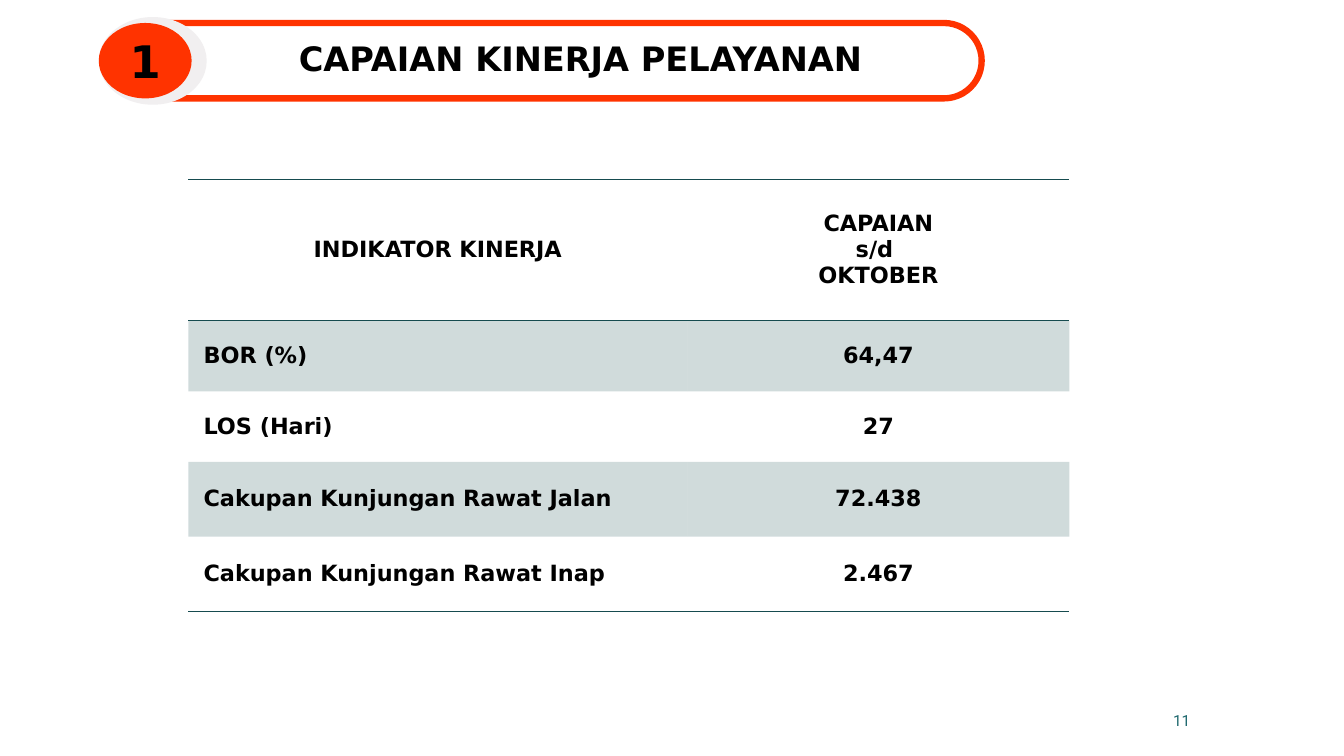
from dataclasses import dataclass, field
from typing import Any, Optional

from lxml import etree
from pptx import Presentation
from pptx import util as u
from pptx.dml import color as col
from pptx.enum import shapes, text
from pptx.oxml import ns

BLACK = col.RGBColor(0x00, 0x00, 0x00)
WHITE = col.RGBColor(0xFF, 0xFF, 0xFF)
RED = col.RGBColor(0xFF, 0x33, 0x00)
GREY = col.RGBColor(0xF1, 0xEF, 0xF0)
TEAL = col.RGBColor(0x16, 0x4B, 0x4F)
AQUA = col.RGBColor(0x1F, 0x69, 0x6F)

KIND = shapes.MSO_SHAPE
MID = text.MSO_ANCHOR.MIDDLE
LEFT, MAIN, RIGHT = text.PP_ALIGN.LEFT, text.PP_ALIGN.CENTER, text.PP_ALIGN.RIGHT
BOLD = {"name": "DejaVu Sans", "bold": True}
PLAIN_GRID = "{2D5ABB26-0587-4C30-8999-92F81FD0307C}"

COLS = (12.57, 9.63)
ROWS = (
    (3.56, "INDIKATOR KINERJA", "CAPAIAN\ns/d \nOKTOBER"),
    (1.78, "BOR (%)", "64,47"),
    (1.78, "LOS (Hari)", "27"),
    (1.88, "Cakupan Kunjungan Rawat Jalan", "72.438"),
    (1.88, "Cakupan Kunjungan Rawat Inap", "2.467"),
)


@dataclass
class Part:
    """A shape, or a text box when kind is None; lengths in cm."""
    box: tuple[float, float, float, float]
    kind: Optional[Any] = None
    fill: Optional[col.RGBColor] = None
    line: Optional[col.RGBColor] = None
    words: str = ""
    size: float = 12
    ink: col.RGBColor = BLACK
    font: dict[str, Any] = field(default_factory=lambda: BOLD)
    para: dict[str, Any] = field(default_factory=lambda: {"alignment": MAIN})
    anchor: Any = MID


PANEL = Part((2.31, 0, 31.52, 19.05), KIND.RECTANGLE, WHITE)
PARTS = (
    Part((22.35, 17.65, 7.9, 1.02), words="11", size=11, ink=AQUA,
         font={"name": "Roboto"}, para={"alignment": RIGHT}),
    Part((2.79, 0.58, 21.95, 1.9), KIND.ROUNDED_RECTANGLE, line=RED),
    Part((2.49, 0.43, 2.72, 2.21), KIND.OVAL, GREY),
    Part((2.49, 0.58, 2.34, 1.9), KIND.OVAL, RED, words="1", size=32),
    Part((3.71, 0.2, 21.84, 1.9), words="CAPAIAN KINERJA PELAYANAN", size=24,
         para={"alignment": MAIN, "line_spacing": 0.9},
         anchor=text.MSO_ANCHOR.BOTTOM),
)


def apply(item: Any, vals: dict[str, Any]) -> None:
    for key, val in vals.items():
        setattr(item, key, val)


def write(frame: Any, words: str, size: float, ink: col.RGBColor,
          font: dict[str, Any], para: dict[str, Any]) -> None:
    for num, line in enumerate(words.split("\n")):
        par = frame.paragraphs[0] if num == 0 else frame.add_paragraph()
        apply(par, para)
        run = par.add_run()
        run.text = line
        apply(run.font, {**font, "size": u.Pt(size)})
        run.font.color.rgb = ink


def draw(slide: Any, part: Part) -> None:
    box = [u.Cm(val) for val in part.box]
    if part.kind is None:
        shape = slide.shapes.add_textbox(*box)
    else:
        shape = slide.shapes.add_shape(part.kind, *box)
        shape.shadow.inherit = False
        if part.kind == KIND.ROUNDED_RECTANGLE:
            shape.adjustments[0] = 0.5
        if part.fill is None:
            shape.fill.background()
        else:
            shape.fill.solid()
            shape.fill.fore_color.rgb = part.fill
        if part.line is None:
            shape.line.fill.background()
        else:
            shape.line.color.rgb = part.line
            shape.line.width = u.Pt(4.5)
    if part.words:
        frame = shape.text_frame
        apply(frame, {"word_wrap": True, "vertical_anchor": part.anchor})
        write(frame, part.words, part.size, part.ink, part.font, part.para)


def shade(cell: Any) -> None:
    """Fill a cell with teal at 20 % opacity."""
    cell.fill.solid()
    cell.fill.fore_color.rgb = TEAL
    tint = cell._tc.tcPr.find(".//" + ns.qn("a:srgbClr"))
    etree.SubElement(tint, ns.qn("a:alpha"), val="20000")


def rule(cell: Any, sides: str) -> None:
    """Add 1 pt borders; sides holds T and B in that order."""
    props = cell._tc.get_or_add_tcPr()
    for num, side in enumerate(sides):
        edge = etree.Element(ns.qn("a:ln" + side), w=str(u.Pt(1)))
        fill = etree.SubElement(edge, ns.qn("a:solidFill"))
        etree.SubElement(fill, ns.qn("a:srgbClr"), val=str(TEAL))
        props.insert(num, edge)


def tabulate(slide: Any) -> None:
    high = sum(row[0] for row in ROWS)
    frame = slide.shapes.add_table(len(ROWS), len(COLS), u.Cm(4.75), u.Cm(4.52),
                                   u.Cm(sum(COLS)), u.Cm(high))
    table = frame.table
    apply(table, {"first_row": True, "horz_banding": False})
    table._tbl.tblPr.find(ns.qn("a:tableStyleId")).text = PLAIN_GRID
    for num, wide in enumerate(COLS):
        table.columns[num].width = u.Cm(wide)
    pad = {"margin_" + side: u.Cm(0.13) for side in ("left", "top", "right", "bottom")}
    for row, (tall, *words) in enumerate(ROWS):
        table.rows[row].height = u.Cm(tall)
        for num, label in enumerate(words):
            cell = table.cell(row, num)
            apply(cell, {**pad, "vertical_anchor": MID})
            name = row > 0 and num == 0
            write(cell.text_frame, label, 16, BLACK, BOLD,
                  {"alignment": LEFT if name else MAIN})
            if name:
                par = cell.text_frame.paragraphs[0]
                par._p.get_or_add_pPr().set("marL", str(u.Cm(0.25)))
            if row % 2:
                shade(cell)
            else:
                cell.fill.background()
            if row == 0:
                rule(cell, "TB")
            elif row == len(ROWS) - 1:
                rule(cell, "B")


def main() -> None:
    deck = Presentation()
    apply(deck, {"slide_width": u.Cm(33.87), "slide_height": u.Cm(19.05)})
    slide = deck.slides.add_slide(deck.slide_layouts[6])
    # Backdrop
    draw(slide, PANEL)
    # Indicator table
    tabulate(slide)
    # Page number, numbered banner and title
    for part in PARTS:
        draw(slide, part)
    deck.save("out.pptx")


if __name__ == "__main__":
    main()
